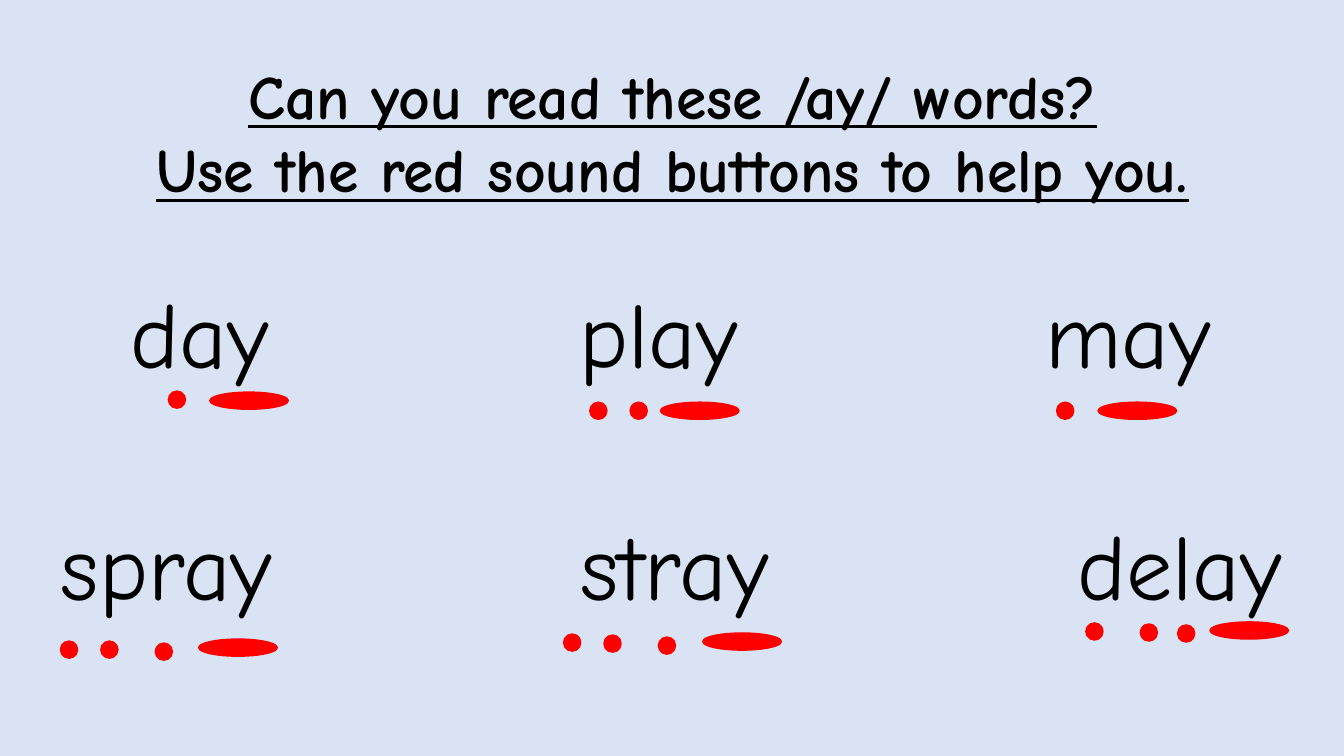
from pptx import Presentation
from pptx.dml.color import RGBColor
from pptx.enum import shapes, text
from pptx.util import Inches, Pt

COLORS = {"background": "DAE3F3", "ink": "000000", "button": "FF0000"}
FONT = "Comic Neue"
BUTTON_HEIGHT = 0.17
DOT_WIDTH = 0.17
DASH_WIDTH = 0.78
WORD_SIZE = (2.6, 1.09)

WORDS = [
    ("day", 1.98, 2.74, [(1.67, 3.88)], (2.08, 3.89)),
    ("play", 6.53, 2.74, [(5.85, 3.99), (6.25, 3.99)], (6.55, 3.99)),
    ("may", 11.19, 2.74, [(10.48, 3.99)], (10.89, 3.99)),
    ("spray", 1.65, 5.04, [(0.6, 6.36), (1, 6.36), (1.54, 6.38)], (1.97, 6.34)),
    ("stray", 6.69, 5.04, [(5.59, 6.29), (5.99, 6.3), (6.53, 6.32)], (6.97, 6.28)),
    ("delay", 11.7, 5.04, [(10.77, 6.18), (11.31, 6.19), (11.68, 6.2)], (12, 6.17)),
]


def color(name):
    return RGBColor.from_string(COLORS[name])


def write_lines(frame, lines, size, heading=False):
    frame.margin_left = frame.margin_right = 0
    frame.margin_top = frame.margin_bottom = 0
    frame.word_wrap = True
    frame.auto_size = text.MSO_AUTO_SIZE.NONE
    frame.vertical_anchor = text.MSO_ANCHOR.TOP
    frame.text = "\n".join(lines)
    for line in frame.paragraphs:
        line.alignment = text.PP_ALIGN.CENTER
        line.line_spacing = 1.0
        line.space_before = line.space_after = Pt(0)
        line.font.name = FONT
        line.font.size = Pt(size)
        line.font.bold = line.font.underline = heading
        line.font.color.rgb = color("ink")


def add_heading(slide, left, top, width, height):
    heading = slide.shapes.title
    heading.left, heading.top = Inches(left), Inches(top)
    heading.width, heading.height = Inches(width), Inches(height)
    write_lines(
        heading.text_frame,
        ["Can you read these /ay/ words?", "Use the red sound buttons to help you."],
        44,
        heading=True,
    )


def add_button(sound_buttons, left, top, width):
    button = sound_buttons.shapes.add_shape(
        shapes.MSO_SHAPE.OVAL,
        Inches(left), Inches(top), Inches(width), Inches(BUTTON_HEIGHT),
    )
    button.shadow.inherit = False
    button.fill.solid()
    button.fill.fore_color.rgb = color("button")
    button.line.color.rgb = color("button")
    button.line.width = Pt(1)


def add_word(slide, word, center, top, dots, dash):
    width, height = WORD_SIZE
    label = slide.shapes.add_textbox(
        Inches(center - width / 2), Inches(top), Inches(width), Inches(height)
    )
    write_lines(label.text_frame, [word], 66)
    sound_buttons = slide.shapes.add_group_shape()
    for dot in dots:
        add_button(sound_buttons, *dot, DOT_WIDTH)
    add_button(sound_buttons, *dash, DASH_WIDTH)


def main():
    deck = Presentation()
    deck.slide_width, deck.slide_height = Inches(13.33), Inches(7.5)
    slide = deck.slides.add_slide(deck.slide_layouts[5])
    slide.background.fill.solid()
    slide.background.fill.fore_color.rgb = color("background")
    add_heading(slide, 0.12, 0.57, 13.1, 1.5)
    for word in WORDS:
        add_word(slide, *word)
    deck.save("out.pptx")


if __name__ == "__main__":
    main()
